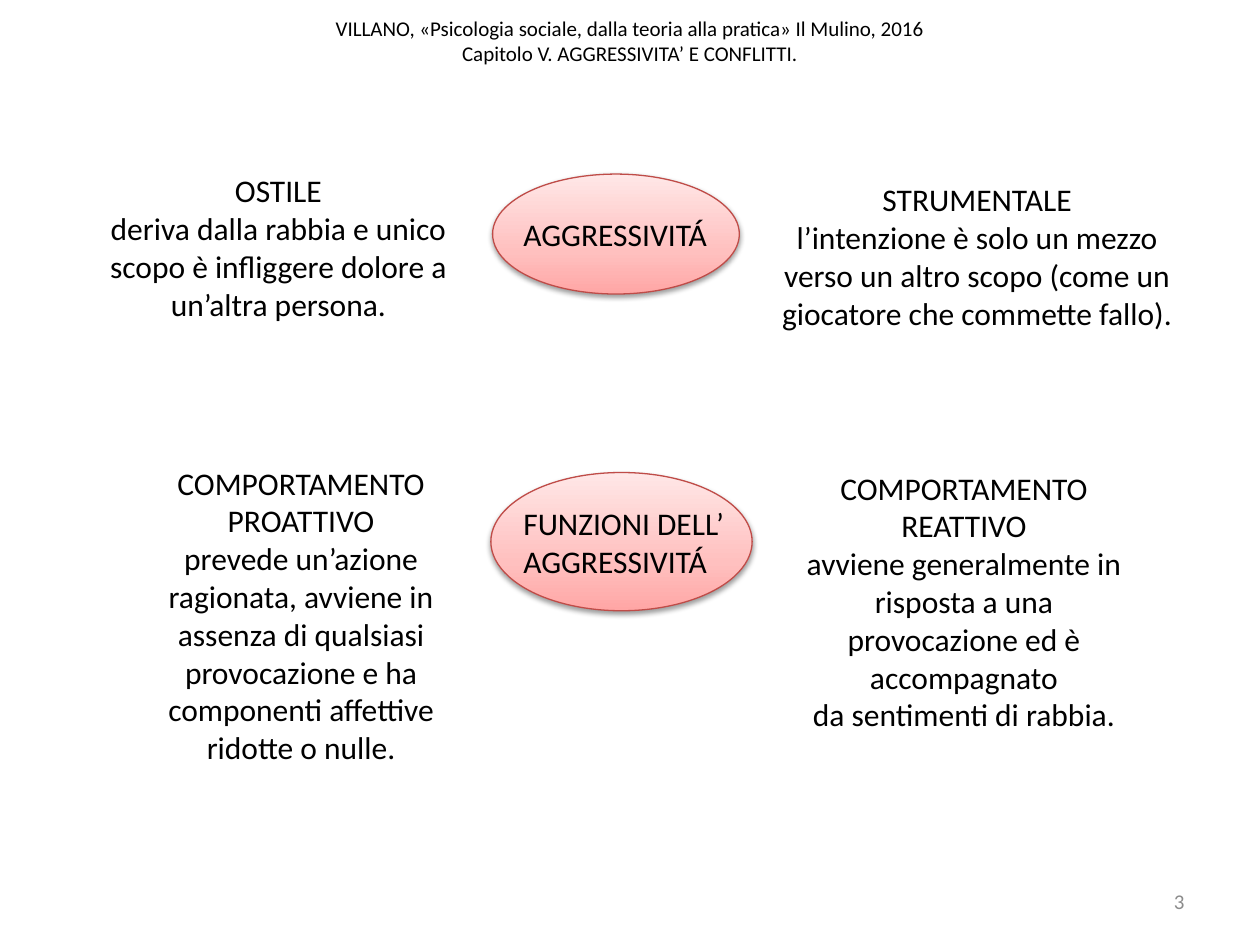
import pptx
import pptx.util
import pptx.dml.color
import pptx.enum.shapes
import pptx.enum.text
from lxml import etree
from pptx.oxml.ns import qn

Pt = pptx.util.Pt
ALIGN = pptx.enum.text.PP_ALIGN
ANCHOR = pptx.enum.text.MSO_ANCHOR

# Content: boxes are left, top, width, height in points
HEADER = ["VILLANO, «Psicologia sociale, dalla teoria alla pratica» Il Mulino, 2016",
          "Capitolo V. AGGRESSIVITA’ E CONFLITTI."]
OVALS = [(281.5, 99.5, 141, 68.5), (280.5, 270, 149.3, 79)]
GRADIENT = [(0, "FFA6A5"), (35, "FFC0BF"), (100, "FFE7E7")]
LABELS = [
    ((292, 119.5, 120.5, 29), False, "AGGRESSIVITÁ"),
    ((292, 284.4, 141, 51), True, "FUNZIONI DELL’ AGGRESSIVITÁ"),
]
DEFINITIONS = [
    ((37.4, 94.3, 243.4, 116.6),
     ["OSTILE",
      "deriva dalla rabbia e unico scopo è infliggere dolore a un’altra persona."]),
    ((439.2, 99.4, 238.3, 116.6),
     ["STRUMENTALE",
      "l’intenzione è solo un mezzo verso un altro scopo "
      "(come un giocatore che commette fallo)."]),
    ((74.9, 261.4, 194.4, 181.4),
     ["COMPORTAMENTO PROATTIVO",
      "prevede un’azione ragionata, avviene in assenza di qualsiasi",
      "provocazione e ha componenti affettive ridotte o nulle."]),
    ((445, 264.2, 211.7, 159.8),
     ["COMPORTAMENTO",
      "REATTIVO",
      "avviene generalmente in risposta a una provocazione ed è accompagnato",
      "da sentimenti di rabbia."]),
]


def rgb(color):
    return pptx.dml.color.RGBColor.from_string(color)


def add_run(p, text, size, color="000000"):
    r = p.add_run()
    r.text = text
    r.font.name = "Calibri"
    r.font.size = Pt(size)
    r.font.color.rgb = rgb(color)


def add_text(s, box, paragraphs, align, size=18, color="000000", wrap=True,
             anchor=ANCHOR.TOP):
    tf = s.shapes.add_textbox(*map(Pt, box)).text_frame
    tf.word_wrap = wrap
    tf.vertical_anchor = anchor
    for i, text in enumerate(paragraphs):
        p = tf.add_paragraph() if i else tf.paragraphs[0]
        p.alignment = align
        add_run(p, text, size, color)


def add_oval(s, box):
    sp = s.shapes.add_shape(pptx.enum.shapes.MSO_SHAPE.OVAL, *map(Pt, box))
    sp.line.color.rgb = rgb("BF4C48")
    sp.line.width = Pt(0.75)
    # Three-stop gradient, darkest at the bottom
    sp.fill.gradient()
    sp.fill.gradient_angle = 90
    stops = sp.element.spPr.find(".//" + qn("a:gsLst"))
    for stop in list(stops):
        stops.remove(stop)
    for pos, color in GRADIENT:
        stop = etree.SubElement(stops, qn("a:gs"), pos=str(pos * 1000))
        etree.SubElement(stop, qn("a:srgbClr"), val=color)
    # Soft shadow straight below
    sp.shadow.inherit = False
    effects = sp.element.spPr.find(qn("a:effectLst"))
    shadow = etree.SubElement(effects, qn("a:outerShdw"), blurRad=str(Pt(3.1)),
                              dist=str(Pt(1.6)), dir="5400000", rotWithShape="0")
    black = etree.SubElement(shadow, qn("a:srgbClr"), val="000000")
    etree.SubElement(black, qn("a:alpha"), val="38000")


prs = pptx.Presentation()
prs.slide_width, prs.slide_height = Pt(720), Pt(540)
s = prs.slides.add_slide(prs.slide_layouts[5])

# Header
title = s.shapes.title
title.left, title.top, title.width, title.height = map(Pt, (0, -8, 720, 62.6))
title.text_frame.vertical_anchor = ANCHOR.MIDDLE
p = title.text_frame.paragraphs[0]
p.alignment = ALIGN.CENTER
for i, line in enumerate(HEADER):
    if i:
        p.add_line_break()
    add_run(p, line, 12)

# Central concepts
for box in OVALS:
    add_oval(s, box)
for box, wrap, text in LABELS:
    add_text(s, box, [text], ALIGN.LEFT, wrap=wrap)

# Definitions on both sides
for box, paragraphs in DEFINITIONS:
    add_text(s, box, paragraphs, ALIGN.CENTER)

# Slide number
add_text(s, (516, 500.5, 168, 28.8), ["3"], ALIGN.RIGHT, 12, "8C8C8C",
         anchor=ANCHOR.MIDDLE)

prs.save("out.pptx")
